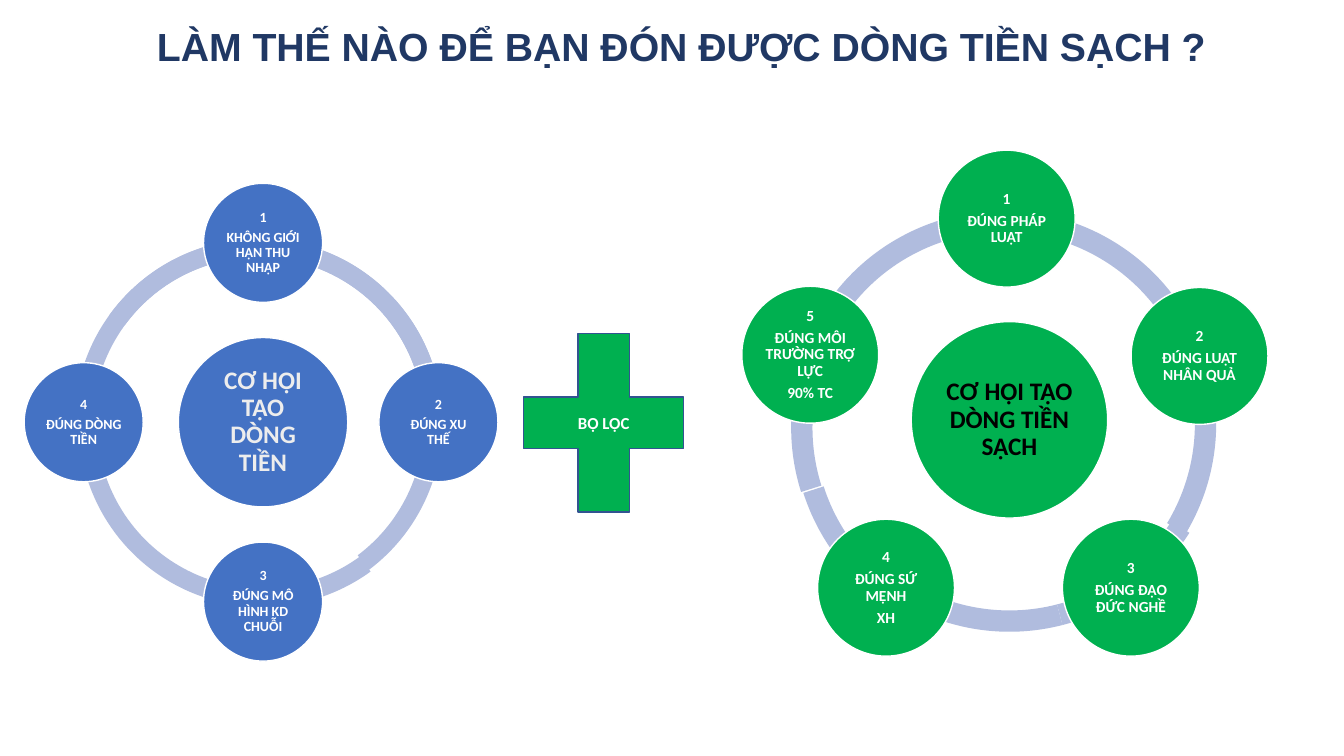
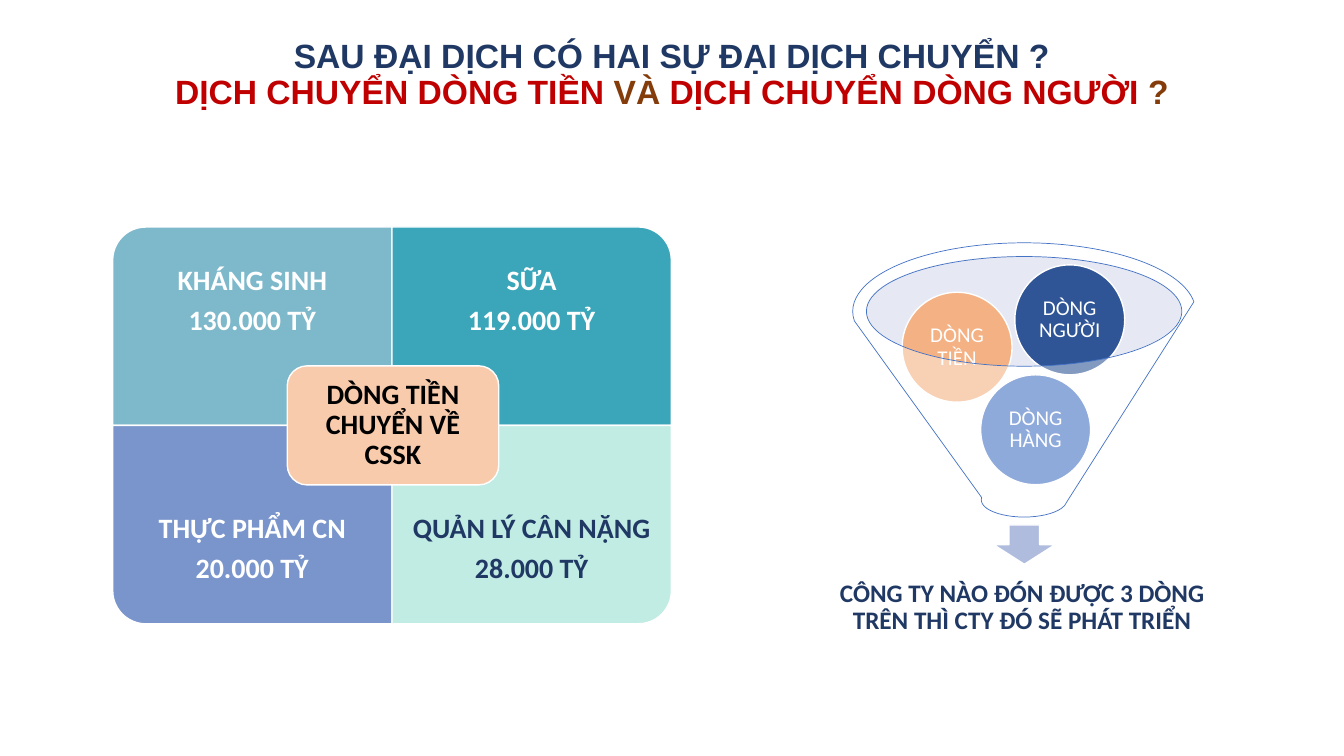
from dataclasses import dataclass

from lxml import etree
from pptx import Presentation
from pptx.dml.color import RGBColor
from pptx.enum.shapes import MSO_SHAPE
from pptx.enum.text import MSO_ANCHOR, PP_ALIGN
from pptx.oxml.ns import qn
from pptx.util import Cm, Pt

CENTER = PP_ALIGN.CENTER
MIDDLE, BOTTOM = MSO_ANCHOR.MIDDLE, MSO_ANCHOR.BOTTOM
OVAL, ARC, PLUS = MSO_SHAPE.OVAL, MSO_SHAPE.BLOCK_ARC, MSO_SHAPE.MATH_PLUS
ONE_ROUND, ROUNDED = MSO_SHAPE.ROUND_1_RECTANGLE, MSO_SHAPE.ROUNDED_RECTANGLE
FUNNEL, DOWN_ARROW = MSO_SHAPE.FUNNEL, MSO_SHAPE.DOWN_ARROW


@dataclass(frozen=True)
class Theme:
    # Colours
    white: str = "FFFFFF"
    black: str = "000000"
    navy: str = "203864"
    red: str = "C00000"
    brown: str = "843C0B"
    blue: str = "4472C4"
    dark_blue: str = "2F5597"
    green: str = "00B050"
    plus_edge: str = "325491"
    ring: str = "B0BCDE"
    pale_gray: str = "EDEDED"
    antibiotic: str = "7EB8CB"
    milk: str = "3BA6B9"
    food: str = "7995CB"
    weight: str = "C1ECE4"
    peach: str = "F8CBAD"
    orange: str = "F4B183"
    rim: str = "C1C9E4"
    # Fonts and type sizes
    title_font: str = "Arial"
    body_font: str = "Calibri"
    title: int = 28
    long_title: int = 24
    quadrant: int = 20
    hub: int = 18
    ball: int = 15
    filter: int = 12
    large_node: int = 11
    small_node: int = 10


T = Theme()


def add_figure(slide, kind, left, top, width, height, fill, edge=None, edge_width=1, alpha=None):
    """Add a filled preset shape; places and sizes are in centimetres."""
    figure = slide.shapes.add_shape(kind, Cm(left), Cm(top), Cm(width), Cm(height))
    figure.shadow.inherit = False
    figure.fill.solid()
    figure.fill.fore_color.rgb = RGBColor.from_string(fill)
    if alpha is not None:
        color = figure.fill._xPr.find(qn("a:solidFill"))[0]
        etree.SubElement(color, qn("a:alpha")).set("val", str(alpha * 1000))
    if edge:
        figure.line.color.rgb = RGBColor.from_string(edge)
        figure.line.width = Pt(edge_width)
    else:
        figure.line.fill.background()
    return figure


def write(shape, paragraphs, size, color=T.white, bold=True, font=T.body_font,
          inset=0.04, anchor=MIDDLE, spacing=0.9, after=0.35):
    """Fill a shape with centred paragraphs: strings or lists of (text, colour)."""
    frame = shape.text_frame
    frame.word_wrap = True
    frame.vertical_anchor = anchor
    frame.margin_left = frame.margin_right = Cm(inset)
    frame.margin_top = frame.margin_bottom = Cm(inset)
    for number, content in enumerate(paragraphs):
        paragraph = frame.add_paragraph() if number else frame.paragraphs[0]
        paragraph.alignment = CENTER
        paragraph.line_spacing = spacing
        paragraph.space_after = Pt(size * after)
        runs = [(content, color)] if isinstance(content, str) else content
        for text, run_color in runs:
            run = paragraph.add_run()
            run.text = text
            run.font.name = font
            run.font.size = Pt(size)
            run.font.bold = bold
            run.font.color.rgb = RGBColor.from_string(run_color)


deck = Presentation()
deck.slide_width, deck.slide_height = Cm(33.87), Cm(19.05)
cycles_slide, shifts_slide = [deck.slides.add_slide(deck.slide_layouts[6]) for _ in range(2)]

# Titles
titles = [
    (cycles_slide, (3.43, 0.25, 27.48, 1.65), T.title,
     ["LÀM THẾ NÀO ĐỂ BẠN ĐÓN ĐƯỢC DÒNG TIỀN SẠCH ?"]),
    (shifts_slide, (3.66, 0, 26.54, 2.95), T.long_title,
     ["SAU ĐẠI DỊCH CÓ HAI SỰ ĐẠI DỊCH CHUYỂN ?",
      [("DỊCH CHUYỂN DÒNG TIỀN ", T.red), ("VÀ ", T.brown),
       ("DỊCH CHUYỂN DÒNG NGƯỜI ", T.red), ("?", T.brown)]]),
]
for slide, area, size, lines in titles:
    title = slide.shapes.add_textbox(*[Cm(length) for length in area])
    write(title, lines, size, color=T.navy, font=T.title_font,
          inset=0.13, anchor=BOTTOM, after=0)

# Slide 1: two cycles, each with ring arcs (left, top, start, end), a hub and nodes
cycles = [
    dict(
        fill=T.blue, ring_size=9.27, node_size=3, type_size=T.small_node,
        arcs=[(1.98, 6.02, 108, 161.98), (1.98, 6.02, 54, 108),
              (1.88, 6.02, 215.99, 53.16), (1.88, 6.02, 162.82, 0.01)],
        hub=(6.63, 10.64, 4.27, "CƠ HỘI TẠO DÒNG TIỀN", T.pale_gray),
        nodes=[(6.63, 6.12, ["KHÔNG GIỚI HẠN THU NHẬP"]),
               (11.05, 10.64, ["ĐÚNG XU THẾ"]),
               (6.63, 15.16, ["ĐÚNG MÔ HÌNH KD CHUỖI"]),
               (2.11, 10.64, ["ĐÚNG DÒNG TIỀN"])],
    ),
    dict(
        fill=T.green, ring_size=10.74, node_size=3.45, type_size=T.large_node,
        arcs=[(19.99, 5.41, 120.24, 162.19), (20.07, 5.18, 75.6, 118.8),
              (20.07, 5.18, 32.4, 75.6), (19.91, 5.31, 204.55, 31.19),
              (19.94, 5.41, 162.46, 203.88)],
        hub=(25.44, 10.58, 4.95, "CƠ HỘI TẠO DÒNG TIỀN SẠCH", T.black),
        nodes=[(25.37, 5.51, ["ĐÚNG PHÁP LUẬT"]),
               (30.23, 8.97, ["ĐÚNG LUẬT NHÂN QUẢ"]),
               (28.5, 14.81, ["ĐÚNG ĐẠO ĐỨC NGHỀ"]),
               (22.33, 14.81, ["ĐÚNG SỨ MỆNH", "XH"]),
               (20.42, 8.94, ["ĐÚNG MÔI TRƯỜNG TRỢ LỰC", "90% TC"])],
    ),
]
for cycle in cycles:
    for left, top, start, end in cycle["arcs"]:
        arc = add_figure(cycles_slide, ARC, left, top,
                         cycle["ring_size"], cycle["ring_size"], T.ring)
        # Angles are stored in 60000ths of a degree, adjustments in 100000ths
        arc.adjustments[0] = start * 0.6
        arc.adjustments[1] = end * 0.6
        arc.adjustments[2] = 0.05

    x, y, size, label, color = cycle["hub"]
    hub = add_figure(cycles_slide, OVAL, x - size / 2, y - size / 2, size, size,
                     cycle["fill"], T.white)
    write(hub, [label], T.hub, color=color, inset=0.08)

    size = cycle["node_size"]
    for number, (x, y, labels) in enumerate(cycle["nodes"], start=1):
        node = add_figure(cycles_slide, OVAL, x - size / 2, y - size / 2, size, size,
                          cycle["fill"], T.white)
        write(node, [str(number), *labels], cycle["type_size"])

# Slide 1: filter between the cycles
filter_plus = add_figure(cycles_slide, PLUS, 12.47, 7.59, 5.49, 6.12, T.green, T.plus_edge)
write(filter_plus, ["BỘ LỌC"], T.filter, inset=0.13, spacing=1, after=0)

# Slide 2: matrix of four markets, row by row, each turned to round its outer corner
matrix_left, matrix_top, cell_width, cell_height, label_height = 2.84, 5.72, 7.04, 5, 3.76
markets = [
    ("KHÁNG SINH", "130.000 TỶ", T.antibiotic, T.white, 270),
    ("SỮA", "119.000 TỶ", T.milk, T.white, 0),
    ("THỰC PHẨM CN", "20.000 TỶ", T.food, T.white, 180),
    ("QUẢN LÝ CÂN NẶNG", "28.000 TỶ", T.weight, T.navy, 90),
]
for index, (market, value, fill, color, turn) in enumerate(markets):
    row, column = divmod(index, 2)
    left = matrix_left + column * cell_width
    top = matrix_top + row * cell_height
    width, height = (cell_height, cell_width) if turn % 180 else (cell_width, cell_height)
    cell = add_figure(shifts_slide, ONE_ROUND, left + (cell_width - width) / 2,
                      top + (cell_height - height) / 2, width, height, fill, T.white)
    cell.rotation = turn
    label_top = top + row * (cell_height - label_height)
    market_label = shifts_slide.shapes.add_textbox(
        Cm(left), Cm(label_top), Cm(cell_width), Cm(label_height))
    write(market_label, [market, value], T.quadrant, color=color, inset=0.4)

matrix_hub = add_figure(shifts_slide, ROUNDED, 7.24, 9.22, 5.33, 3, T.peach, T.white)
write(matrix_hub, ["DÒNG TIỀN CHUYỂN VỀ CSSK"], T.quadrant, color=T.black, inset=0.2)

# Slide 2: three flows in a funnel
add_figure(shifts_slide, OVAL, 21.82, 6.45, 7.95, 2.77, T.rim, alpha=40)
add_figure(shifts_slide, DOWN_ARROW, 25.04, 13.23, 1.55, 0.99, T.ring, T.white)
outcome = shifts_slide.shapes.add_textbox(Cm(20.5), Cm(14.4), Cm(10.52), Cm(1.85))
write(outcome, ["CÔNG TY NÀO ĐÓN ĐƯỢC 3 DÒNG TRÊN THÌ CTY ĐÓ SẼ PHÁT TRIỂN"],
      T.hub, color=T.navy, inset=0.36)

flow_size = 2.77
flows = [
    (26.1, 10.83, "DÒNG HÀNG", T.blue),
    (24.12, 8.75, "DÒNG TIỀN", T.orange),
    (26.96, 8.06, "DÒNG NGƯỜI", T.dark_blue),
]
for x, y, label, fill in flows:
    flow = add_figure(shifts_slide, OVAL, x - flow_size / 2, y - flow_size / 2,
                      flow_size, flow_size, fill, T.white)
    write(flow, [label], T.ball, bold=False)

add_figure(shifts_slide, FUNNEL, 21.49, 6.12, 8.64, 6.91, T.white, T.blue,
           edge_width=0.5, alpha=40)

deck.save("out.pptx")
